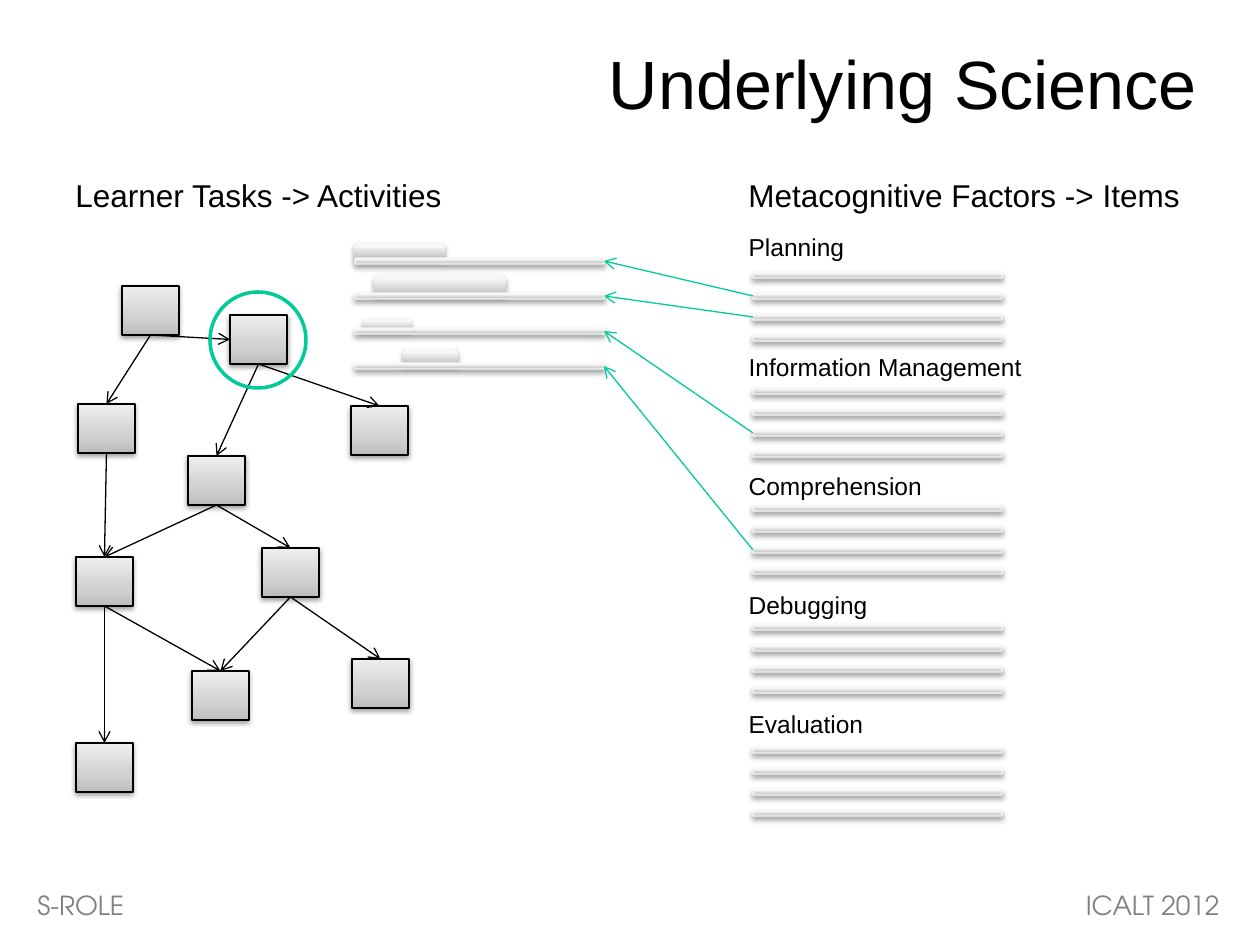
"""Build the Underlying Science slide: a task graph linked to metacognitive factors."""
from typing import Any, NamedTuple

import lxml.etree
import pptx
import pptx.dml.color
import pptx.enum.shapes
import pptx.enum.text
import pptx.oxml.ns
import pptx.util

RGB = pptx.dml.color.RGBColor
SHAPE = pptx.enum.shapes.MSO_SHAPE
ALIGN = pptx.enum.text.PP_ALIGN
ANCHOR = pptx.enum.text.MSO_ANCHOR
Pt = pptx.util.Pt
qn = pptx.oxml.ns.qn

PX_PER_INCH = 126
BLACK = RGB(0x00, 0x00, 0x00)
GREY = RGB(0x80, 0x80, 0x80)
GREEN = RGB(0x00, 0xCC, 0x99)
BAR_EDGE = RGB(0xF9, 0xF9, 0xF9)
NODE_STOPS = ((0, RGB(0xBD, 0xBD, 0xBD)), (35, RGB(0xD1, 0xD1, 0xD1)), (100, RGB(0xEE, 0xEE, 0xEE)))
BAR_STOPS = ((0, RGB(0xBE, 0xBE, 0xBE)), (80, RGB(0xF7, 0xF7, 0xF7)), (100, RGB(0xF8, 0xF8, 0xF8)))
TOP, LEFT, BOTTOM, RIGHT = range(4)


class Box(NamedTuple):
    left: int
    top: int
    width: int
    height: int


class Look(NamedTuple):
    preset: Any
    stops: tuple
    edge: Any
    shadow_alpha: int
    shadow_distance: float


class Edge(NamedTuple):
    start: str
    end: str
    start_side: int = BOTTOM
    end_side: int = TOP


NODE = Look(SHAPE.RECTANGLE, NODE_STOPS, BLACK, 38, 1.6)
BAR = Look(SHAPE.ROUNDED_RECTANGLE, BAR_STOPS, BAR_EDGE, 35, 1.8)
TAB = Look(SHAPE.SNIP_2_SAME_RECTANGLE, BAR_STOPS, None, 35, 1.8)

NODE_WIDTH, NODE_HEIGHT = 57, 49
BAR_WIDTH, BAR_HEIGHT = 249, 6
FACTOR_LEFT, FACTOR_PITCH, ITEMS_PER_FACTOR = 753, 21, 4
ACTIVITY_LEFT, ACTIVITY_TOP, ACTIVITY_PITCH = 355, 258, 35

TASKS = {
    "start": (122, 286), "left": (78, 404), "current": (230, 315), "right": (351, 406),
    "middle": (188, 456), "branch": (262, 548), "merge": (76, 557),
    "joined": (192, 671), "end right": (352, 659), "end left": (76, 743),
}
TASK_EDGES = (
    Edge("start", "left"), Edge("start", "current", end_side=LEFT), Edge("current", "right"),
    Edge("left", "merge"), Edge("current", "middle"), Edge("merge", "end left"),
    Edge("merge", "joined"), Edge("middle", "branch"), Edge("branch", "end right"),
    Edge("middle", "merge"), Edge("branch", "joined"),
)
TABS = (Box(374, 275, 132, 20), Box(363, 319, 48, 11), Box(403, 349, 55, 16), Box(354, 243, 91, 16))
FACTOR_TOPS = {
    "Planning": 272, "Information Management": 388, "Comprehension": 505,
    "Debugging": 624, "Evaluation": 747,
}
ITEM_FOR_ACTIVITY = (("Planning", 1), ("Planning", 2), ("Information Management", 2), ("Comprehension", 2))


def emu(px: int) -> int:
    """Turn pixels into EMU."""
    return round(px * 914400 / PX_PER_INCH)


def place(shape: Any, box: Box) -> None:
    """Move and size a shape."""
    shape.left, shape.top, shape.width, shape.height = map(emu, box)


def write(frame: Any, *lines: str, size: float, font: str = "Arial", color: RGB = BLACK,
          align: Any = ALIGN.LEFT, anchor: Any = ANCHOR.TOP, gap: float = 0,
          line_spacing: float = 1.0) -> None:
    """Fill a text frame with unbulleted paragraphs."""
    frame.word_wrap = True
    frame.auto_size = pptx.enum.text.MSO_AUTO_SIZE.NONE
    frame.vertical_anchor = anchor
    for index, line in enumerate(lines):
        paragraph = frame.add_paragraph() if index else frame.paragraphs[0]
        paragraph.text = line
        paragraph.alignment = align
        paragraph.line_spacing = line_spacing
        paragraph.space_before = Pt(gap if index else 0)
        paragraph.space_after = Pt(0)
        properties = paragraph._p.get_or_add_pPr()
        properties.set("marL", "0")
        properties.set("indent", "0")
        lxml.etree.SubElement(properties, qn("a:buNone"))
        paragraph.font.size = Pt(size)
        paragraph.font.name = font
        paragraph.font.color.rgb = color


def add_text(slide: Any, box: Box, text: str, **style: Any) -> None:
    """Add a text box."""
    write(slide.shapes.add_textbox(*map(emu, box)).text_frame, text, **style)


def add_color(parent: Any, color: RGB) -> Any:
    """Append an RGB colour element."""
    return lxml.etree.SubElement(parent, qn("a:srgbClr"), val=str(color))


def add_block(slide: Any, box: Box, look: Look) -> Any:
    """Add a shape with a gradient, an edge and a soft shadow."""
    block = slide.shapes.add_shape(look.preset, *map(emu, box))
    block.fill.gradient()
    block.fill.gradient_angle = 90
    properties = block._element.spPr
    stop_list = properties.find(qn("a:gradFill")).find(qn("a:gsLst"))
    for stop in list(stop_list):
        stop_list.remove(stop)
    for percent, color in look.stops:
        add_color(lxml.etree.SubElement(stop_list, qn("a:gs"), pos=str(percent * 1000)), color)
    if look.edge is None:
        block.line.fill.background()
    else:
        block.line.color.rgb = look.edge
        block.line.width = Pt(0.75)
    block.shadow.inherit = False
    shadow = lxml.etree.SubElement(
        properties.find(qn("a:effectLst")), qn("a:outerShdw"), blurRad=str(Pt(3.1)),
        dist=str(Pt(look.shadow_distance)), dir="5400000", rotWithShape="0")
    lxml.etree.SubElement(add_color(shadow, BLACK), qn("a:alpha"), val=str(look.shadow_alpha * 1000))
    return block


def add_bars(slide: Any, left: int, top: int, pitch: int) -> list:
    """Add a column of evenly spaced bars."""
    return [add_block(slide, Box(left, top + row * pitch, BAR_WIDTH, BAR_HEIGHT), BAR)
            for row in range(ITEMS_PER_FACTOR)]


def add_arrow(slide: Any, start: Any, start_side: int, end: Any, end_side: int, color: RGB) -> None:
    """Join two shapes with an arrow."""
    arrow = slide.shapes.add_connector(pptx.enum.shapes.MSO_CONNECTOR.STRAIGHT, 0, 0, 0, 0)
    arrow.begin_connect(start, start_side)
    arrow.end_connect(end, end_side)
    arrow.line.color.rgb = color
    arrow.line.width = Pt(0.75)
    properties = arrow._element.spPr
    lxml.etree.SubElement(properties.find(qn("a:ln")), qn("a:tailEnd"), type="arrow")
    lxml.etree.SubElement(properties, qn("a:effectLst"))


def main() -> None:
    """Build and save the slide."""
    deck = pptx.Presentation()
    deck.slide_width, deck.slide_height = emu(1260), emu(945)
    slide = deck.slides.add_slide(deck.slide_layouts[1])

    title = slide.shapes.title
    place(title, Box(63, 38, 1134, 98))
    frame = title.text_frame
    frame.margin_left = frame.margin_top = frame.margin_right = frame.margin_bottom = 0
    write(frame, "Underlying Science", size=39, align=ALIGN.RIGHT, anchor=ANCHOR.MIDDLE, line_spacing=0.93)
    factors = slide.placeholders[1]
    place(factors, Box(736, 226, 301, 518))
    write(factors.text_frame, *FACTOR_TOPS, size=14, gap=51.3)

    add_text(slide, Box(63, 170, 396, 50), "Learner Tasks -> Activities", size=18)
    add_text(slide, Box(736, 170, 465, 50), "Metacognitive Factors -> Items", size=18)
    footer = {"size": 15, "font": "TeX Gyre Adventor", "color": GREY}
    add_text(slide, Box(25, 883, 552, 44), "S-ROLE", **footer)
    add_text(slide, Box(931, 883, 301, 44), "ICALT 2012", align=ALIGN.RIGHT, **footer)

    for tab in TABS:
        add_block(slide, tab, TAB)
    tasks = {task: add_block(slide, Box(*corner, NODE_WIDTH, NODE_HEIGHT), NODE)
             for task, corner in TASKS.items()}
    for edge in TASK_EDGES:
        add_arrow(slide, tasks[edge.start], edge.start_side, tasks[edge.end], edge.end_side, BLACK)

    items = {factor: add_bars(slide, FACTOR_LEFT, top, FACTOR_PITCH) for factor, top in FACTOR_TOPS.items()}
    activities = add_bars(slide, ACTIVITY_LEFT, ACTIVITY_TOP, ACTIVITY_PITCH)
    highlight = slide.shapes.add_shape(SHAPE.OVAL, *map(emu, Box(210, 292, 96, 96)))
    highlight.fill.background()
    highlight.line.color.rgb = GREEN
    highlight.line.width = Pt(2)
    highlight.shadow.inherit = False
    for activity, (factor, row) in zip(activities, ITEM_FOR_ACTIVITY):
        add_arrow(slide, items[factor][row], LEFT, activity, RIGHT, GREEN)

    deck.save("out.pptx")


if __name__ == "__main__":
    main()
